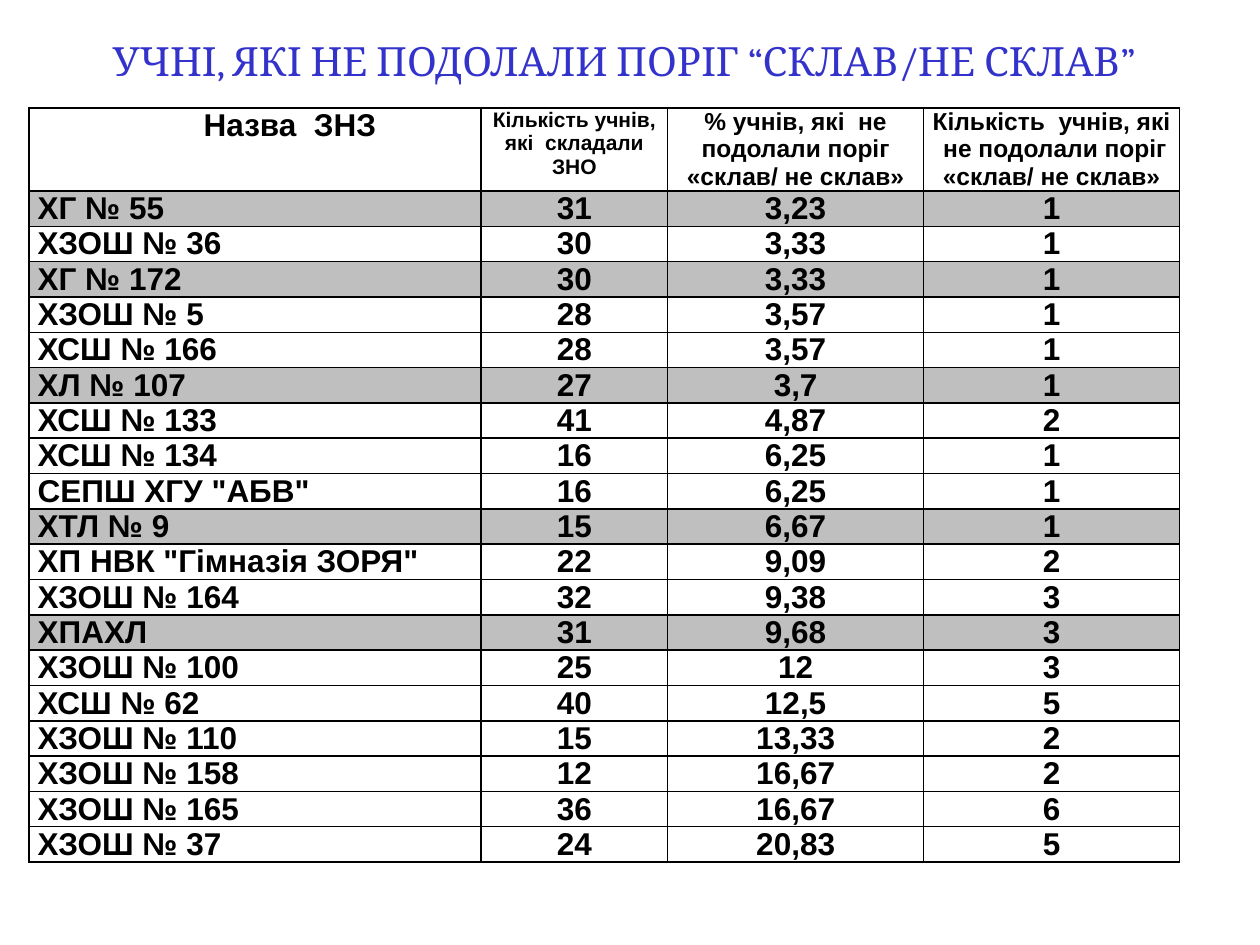
"""Build a slide with a table of schools whose pupils missed the pass threshold."""
import pptx
import pptx.dml.color
import pptx.enum.text
import pptx.oxml.ns
import pptx.util
from lxml import etree
from pptx.util import Cm, Pt

ALIGN = pptx.enum.text.PP_ALIGN
ANCHOR = pptx.enum.text.MSO_ANCHOR

TITLE = "УЧНІ, ЯКІ НЕ ПОДОЛАЛИ ПОРІГ “СКЛАВ/НЕ СКЛАВ”"
HEADERS = [
    ("Назва  ЗНЗ", 18),
    ("Кількість учнів, які  складали ЗНО", 12),
    ("% учнів, які  не подолали поріг «склав/ не склав»", 14),
    ("Кількість  учнів, які  не подолали поріг «склав/ не склав»", 14),
]
SCHOOLS = [
    ("ХГ № 55", "31", "3,23", "1"),
    ("ХЗОШ № 36", "30", "3,33", "1"),
    ("ХГ № 172", "30", "3,33", "1"),
    ("ХЗОШ № 5", "28", "3,57", "1"),
    ("ХСШ № 166", "28", "3,57", "1"),
    ("ХЛ № 107", "27", "3,7", "1"),
    ("ХСШ № 133", "41", "4,87", "2"),
    ("ХСШ № 134", "16", "6,25", "1"),
    ('СЕПШ ХГУ "АБВ"', "16", "6,25", "1"),
    ("ХТЛ № 9", "15", "6,67", "1"),
    ('ХП НВК "Гімназія ЗОРЯ"', "22", "9,09", "2"),
    ("ХЗОШ № 164", "32", "9,38", "3"),
    ("ХПАХЛ", "31", "9,68", "3"),
    ("ХЗОШ № 100", "25", "12", "3"),
    ("ХСШ № 62", "40", "12,5", "5"),
    ("ХЗОШ № 110", "15", "13,33", "2"),
    ("ХЗОШ № 158", "12", "16,67", "2"),
    ("ХЗОШ № 165", "36", "16,67", "6"),
    ("ХЗОШ № 37", "24", "20,83", "5"),
]
SHADED = {"ХГ № 55", "ХГ № 172", "ХЛ № 107", "ХТЛ № 9", "ХПАХЛ"}
COLUMN_WIDTHS = [9.12, 3.76, 5.16, 5.16]
HEADER_HEIGHT = 1.67
ROW_HEIGHT = 0.71


def rgb(value):
    """Return the colour for a hex string."""
    return pptx.dml.color.RGBColor.from_string(value)


def format_text(tf, size, font, color, align, bold=False):
    """Format every paragraph and run of a text frame."""
    for p in tf.paragraphs:
        p.alignment = align
        for r in p.runs:
            r.font.size = Pt(size)
            r.font.name = font
            r.font.bold = bold
            r.font.color.rgb = rgb(color)


def add_borders(cell, color="000000", width=1):
    """Draw a solid line on all four sides of a cell."""
    qn = pptx.oxml.ns.qn
    tc_pr = cell._tc.get_or_add_tcPr()
    for side in ("a:lnL", "a:lnR", "a:lnT", "a:lnB"):
        line = etree.SubElement(tc_pr, qn(side), w=str(Pt(width)))
        fill = etree.SubElement(line, qn("a:solidFill"))
        etree.SubElement(fill, qn("a:srgbClr"), val=color)


def fill_cell(cell, text, size=18, align=ALIGN.CENTER, anchor=ANCHOR.MIDDLE, fill="FFFFFF"):
    """Write and style one table cell."""
    cell.margin_left = cell.margin_right = Cm(0.18)
    cell.margin_top = cell.margin_bottom = Cm(0)
    cell.vertical_anchor = anchor
    add_borders(cell)
    cell.fill.solid()
    cell.fill.fore_color.rgb = rgb(fill)
    cell.text_frame.text = text
    format_text(cell.text_frame, size, "Arial", "000000", align, bold=True)


def add_title(s):
    """Place and format the slide title."""
    sp = s.shapes.title
    sp.left, sp.top, sp.width, sp.height = Cm(0.79), Cm(0.58), Cm(23.6), Cm(1.27)
    tf = sp.text_frame
    tf.text = TITLE
    tf.word_wrap = True
    tf.vertical_anchor = ANCHOR.MIDDLE
    format_text(tf, 23, "Cambria", "3333CC", ALIGN.CENTER)


def add_school_table(s):
    """Add the table of schools with its header row."""
    height = HEADER_HEIGHT + ROW_HEIGHT * len(SCHOOLS)
    table = s.shapes.add_table(
        len(SCHOOLS) + 1, len(HEADERS),
        Cm(0.58), Cm(2.18), Cm(sum(COLUMN_WIDTHS)), Cm(height),
    ).table
    table.first_row = table.horz_banding = False
    for column, width in zip(table.columns, COLUMN_WIDTHS):
        column.width = Cm(width)
    for row in table.rows:
        row.height = Cm(ROW_HEIGHT)
    table.rows[0].height = Cm(HEADER_HEIGHT)

    for j, (text, size) in enumerate(HEADERS):
        fill_cell(table.cell(0, j), text, size, anchor=ANCHOR.TOP)
    table.cell(0, 0).margin_left = Cm(1.59)
    for i, school in enumerate(SCHOOLS, start=1):
        fill = "BFBFBF" if school[0] in SHADED else "FFFFFF"
        for j, text in enumerate(school):
            align = ALIGN.CENTER if j else ALIGN.JUSTIFY
            fill_cell(table.cell(i, j), text, align=align, fill=fill)


def main():
    """Create and save the presentation."""
    prs = pptx.Presentation()
    prs.slide_width, prs.slide_height = Cm(25.4), Cm(19.05)
    s = prs.slides.add_slide(prs.slide_layouts.get_by_name("Title Only"))
    add_school_table(s)
    add_title(s)
    prs.save("out.pptx")


if __name__ == "__main__":
    main()
